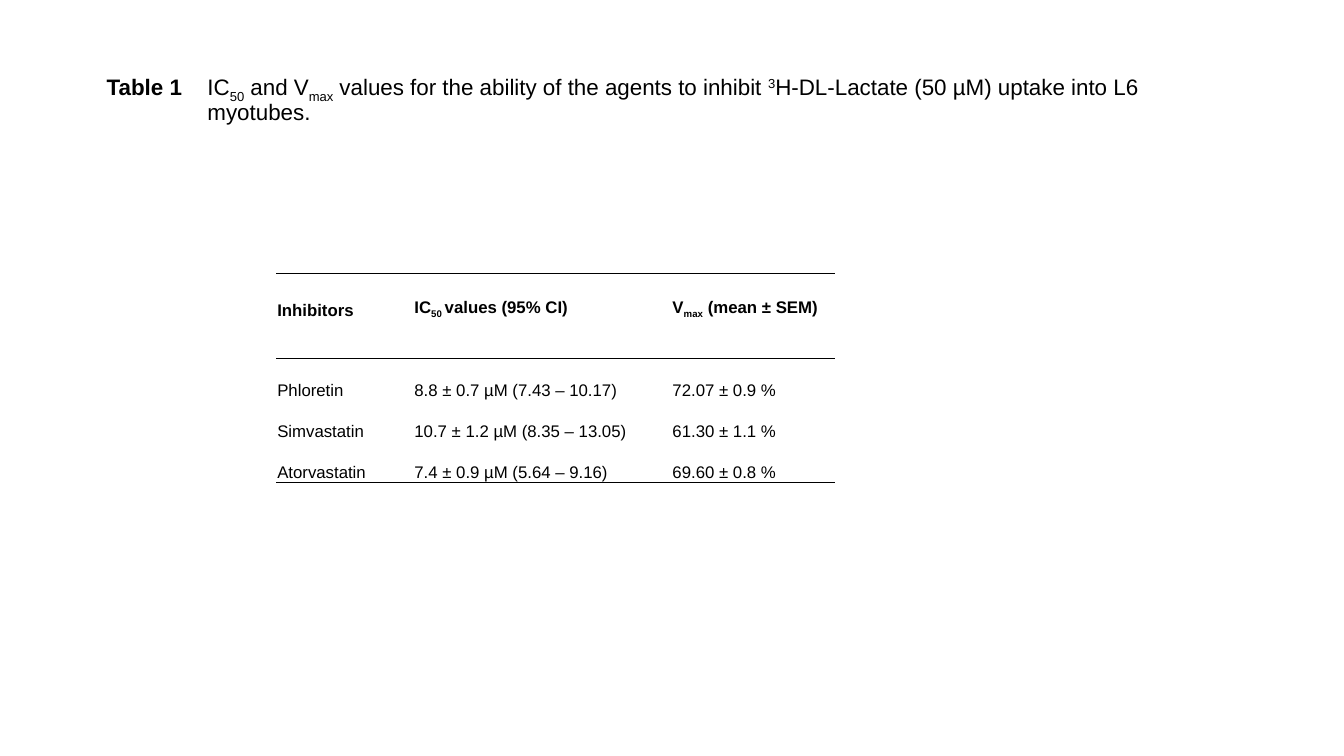
import pptx
import pptx.dml.color
import pptx.enum.text
import pptx.oxml
import pptx.oxml.ns
import pptx.util

Inches = pptx.util.Inches
Pt = pptx.util.Pt
BLACK = pptx.dml.color.RGBColor(0x00, 0x00, 0x00)
SUB, SUPER = -25000, 30000

TITLE = [("Table 1\t", {"bold": True}), ("IC", {}), ("50", {"baseline": SUB}),
         (" and V", {}), ("max", {"baseline": SUB}),
         (" values for the ability of the agents to inhibit ", {}),
         ("3", {"baseline": SUPER}),
         ("H-DL-Lactate (50 µM) uptake into L6 myotubes.", {})]
HEADER = [[("Inhibitors", {})],
          [("IC", {}), ("50 ", {"baseline": SUB}), ("values (95% CI)", {})],
          [("V", {}), ("max", {"baseline": SUB}), (" (mean ± SEM)", {})]]
BODY = [["Phloretin", "8.8 ± 0.7 µM (7.43 – 10.17)", "72.07 ± 0.9 %"],
        ["Simvastatin", "10.7 ± 1.2 µM (8.35 – 13.05)", "61.30 ± 1.1 %"],
        ["Atorvastatin", "7.4 ± 0.9 µM (5.64 – 9.16)", "69.60 ± 0.8 %"]]
COL_WIDTHS = [1.36, 2.56, 1.62]
HEADER_HEIGHT, BODY_HEIGHT = 0.81, 0.38


def add_run(p, text, size=12, bold=False, color=BLACK, font="Arial", baseline=0):
    r = p.add_run()
    r.text = text
    r.font.size = Pt(size)
    r.font.bold = bold
    r.font.name = font
    r.font.color.rgb = color
    if baseline:
        r.font._element.set("baseline", str(baseline))


def set_borders(cell, ruled):
    """Draw a thin line on each edge named in ruled and hide the others."""
    tc_pr = cell._tc.get_or_add_tcPr()
    for i, edge in enumerate("LRTB"):
        fill = (f'<a:solidFill><a:srgbClr val="{BLACK}"/></a:solidFill>'
                if edge in ruled else "<a:noFill/>")
        tc_pr.insert(i, pptx.oxml.parse_xml(
            f'<a:ln{edge} {pptx.oxml.ns.nsdecls("a")} w="{Pt(1)}">{fill}</a:ln{edge}>'))


class SlideBuilder:
    def __init__(self, prs):
        self.slide = prs.slides.add_slide(prs.slide_layouts[6])

    def caption(self, runs, left, top, width, height, hanging):
        tf = self.slide.shapes.add_textbox(
            Inches(left), Inches(top), Inches(width), Inches(height)).text_frame
        tf.word_wrap = True
        p = tf.paragraphs[0]
        p.line_spacing = 0.9
        p_pr = p._p.get_or_add_pPr()
        p_pr.set("marL", str(Inches(hanging)))
        p_pr.set("indent", str(-Inches(hanging)))
        for text, style in runs:
            add_run(p, text, size=16, **style)

    def cell(self, cell, runs, ruled, bold=False, bottom=0):
        cell.margin_left = cell.margin_right = cell.margin_top = Inches(0.01)
        cell.margin_bottom = Inches(bottom)
        cell.vertical_anchor = pptx.enum.text.MSO_ANCHOR.BOTTOM
        cell.fill.background()
        set_borders(cell, ruled)
        p = cell.text_frame.paragraphs[0]
        p.line_spacing = 2.0
        for text, style in runs:
            add_run(p, text, bold=bold, **style)

    def table(self, header, body, left, top):
        heights = [HEADER_HEIGHT] + [BODY_HEIGHT] * len(body)
        table = self.slide.shapes.add_table(
            len(heights), len(COL_WIDTHS), Inches(left), Inches(top),
            Inches(sum(COL_WIDTHS)), Inches(sum(heights))).table
        table.first_row = table.horz_banding = False
        for column, width in zip(table.columns, COL_WIDTHS):
            column.width = Inches(width)
        for row, height in zip(table.rows, heights):
            row.height = Inches(height)
        for c, runs in enumerate(header):
            self.cell(table.cell(0, c), runs, "TB", bold=True, bottom=0.38)
        for r, values in enumerate(body, 1):
            ruled = {1: "T", len(body): "B"}.get(r, "")
            for c, value in enumerate(values):
                self.cell(table.cell(r, c), [(value, {})], ruled)


def main():
    prs = pptx.Presentation()
    prs.slide_width = Inches(13.33)
    prs.slide_height = Inches(7.5)
    builder = SlideBuilder(prs)
    builder.caption(TITLE, 0.96, 0.68, 11, 0.6, hanging=1)
    builder.table(HEADER, BODY, 2.74, 2.71)
    prs.save("out.pptx")


if __name__ == "__main__":
    main()
